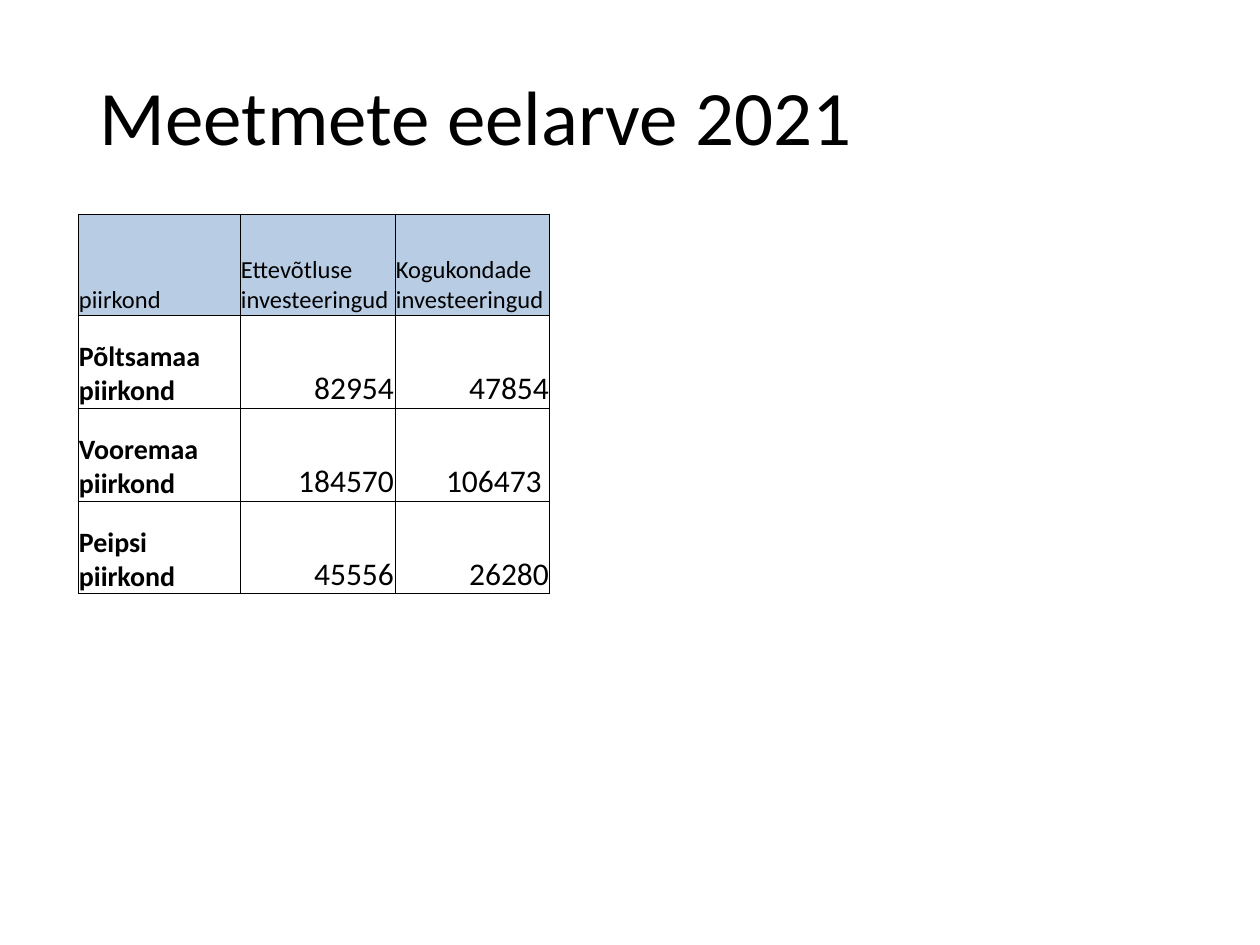
from dataclasses import dataclass

from lxml.etree import SubElement
from pptx import Presentation
from pptx.dml.color import RGBColor
from pptx.enum.text import MSO_ANCHOR, PP_ALIGN
from pptx.oxml.ns import qn
from pptx.util import Emu, Pt

FONT = "Calibri"
COLORS = {"text": "000000", "border": "000000", "header": "B8CCE4"}


def px(n: int) -> Emu:
    """Turn px (126 to the inch) into EMU."""
    return Emu(round(n * 914400 / 126))


@dataclass(frozen=True)
class CellStyle:
    size: int
    bold: bool = False
    align: PP_ALIGN = PP_ALIGN.LEFT
    fill: str | None = None


HEADER = CellStyle(14, fill="header")
REGION = CellStyle(16, bold=True)
AMOUNT = CellStyle(18, align=PP_ALIGN.RIGHT)

ROWS = [
    ("piirkond", "Ettevõtluse investeeringud", "Kogukondade investeeringud"),
    ("Põltsamaa piirkond", "82954", "47854"),
    ("Vooremaa piirkond", "184570", "106473 "),
    ("Peipsi piirkond", "45556", "26280"),
]
COL_WIDTHS = (162, 155, 155)
ROW_HEIGHTS = (101, 93, 93, 93)


def format_text(p, size: int, bold: bool = False) -> None:
    for r in p.runs:
        r.font.name = FONT
        r.font.size = Pt(size)
        r.font.bold = bold
        r.font.color.rgb = RGBColor.from_string(COLORS["text"])


def add_borders(cell, color: str, width: float) -> None:
    tc_pr = cell._tc.get_or_add_tcPr()
    for i, side in enumerate(("a:lnL", "a:lnR", "a:lnT", "a:lnB")):
        ln = tc_pr.makeelement(qn(side), {"w": str(Pt(width))})
        fill = SubElement(ln, qn("a:solidFill"))
        SubElement(fill, qn("a:srgbClr"), val=color)
        tc_pr.insert(i, ln)  # borders come before the fill


def draw_cell(cell, text: str, style: CellStyle) -> None:
    cell.text = text
    cell.vertical_anchor = MSO_ANCHOR.BOTTOM
    cell.margin_left = cell.margin_right = cell.margin_top = px(1)
    cell.margin_bottom = 0
    if style.fill:
        cell.fill.solid()
        cell.fill.fore_color.rgb = RGBColor.from_string(COLORS[style.fill])
    else:
        cell.fill.background()
    p = cell.text_frame.paragraphs[0]
    p.alignment = style.align
    format_text(p, style.size, style.bold)
    add_borders(cell, COLORS["border"], 0.5)


def draw_title(slide, text: str) -> None:
    tf = slide.shapes.add_textbox(px(87), px(50), px(1086), px(141)).text_frame
    tf.word_wrap = True
    tf.vertical_anchor = MSO_ANCHOR.MIDDLE
    tf.text = text
    p = tf.paragraphs[0]
    p.line_spacing = 0.9
    format_text(p, 44)


def draw_budget_table(slide) -> None:
    table = slide.shapes.add_table(
        len(ROWS), len(COL_WIDTHS), px(78), px(214),
        px(sum(COL_WIDTHS)), px(sum(ROW_HEIGHTS))).table
    table.first_row = table.horz_banding = False
    for col, width in zip(table.columns, COL_WIDTHS):
        col.width = px(width)
    for row, height in zip(table.rows, ROW_HEIGHTS):
        row.height = px(height)
    for i, values in enumerate(ROWS):
        for j, text in enumerate(values):
            style = HEADER if i == 0 else REGION if j == 0 else AMOUNT
            draw_cell(table.cell(i, j), text, style)


def main() -> None:
    prs = Presentation()
    prs.slide_width, prs.slide_height = px(1260), px(945)
    slide = prs.slides.add_slide(prs.slide_layouts[6])

    # Title
    draw_title(slide, "Meetmete eelarve 2021")

    # Budget by region
    draw_budget_table(slide)

    prs.save("out.pptx")


if __name__ == "__main__":
    main()
